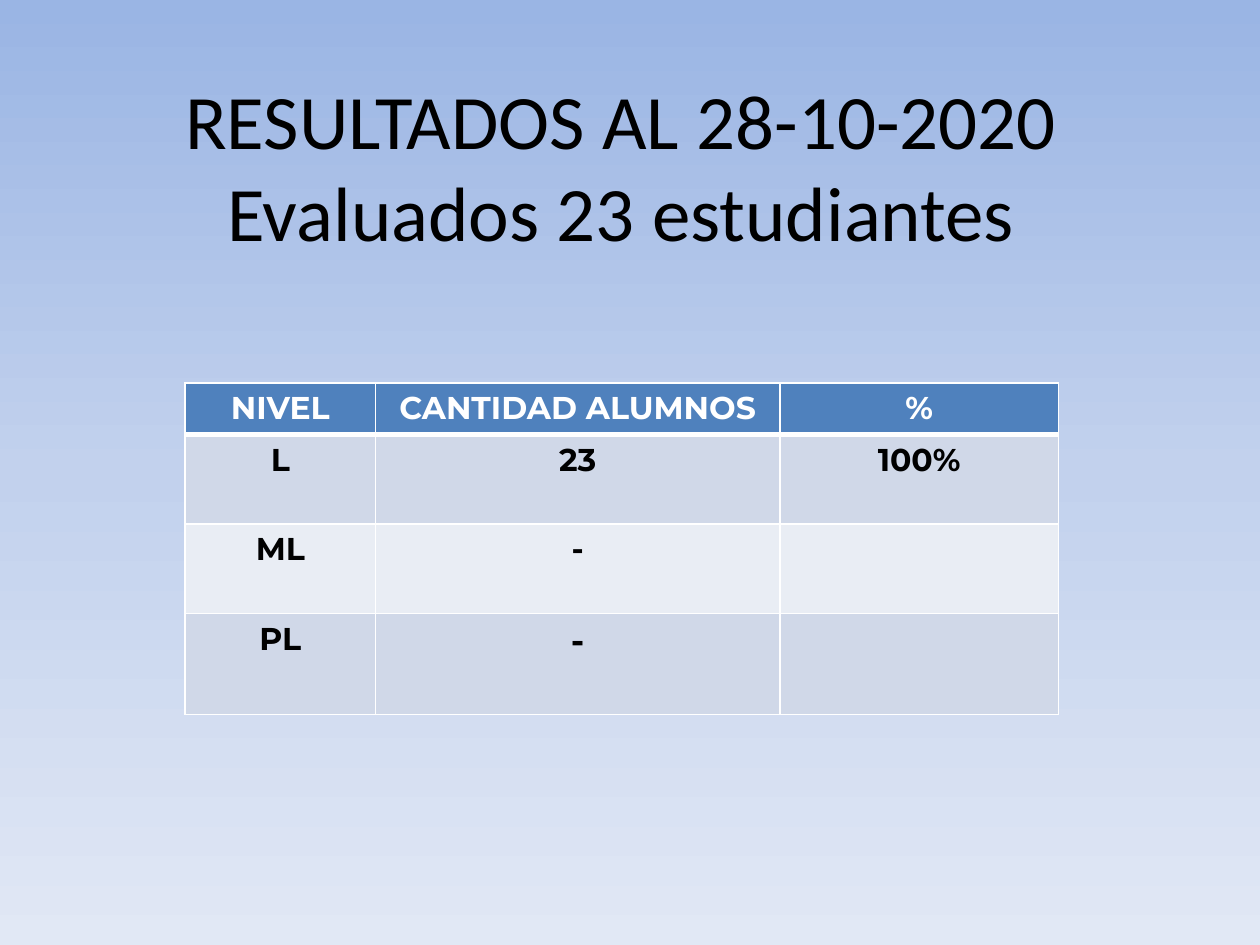
from copy import deepcopy
from pptx import Presentation
from pptx.dml.color import RGBColor
from pptx.enum.text import MSO_ANCHOR as Anchor, PP_ALIGN as Align
from pptx.oxml import parse_xml
from pptx.oxml.ns import nsdecls
from pptx.util import Inches, Pt

ROWS = [
    ("NIVEL", "CANTIDAD ALUMNOS", "%"),
    ("L", "23", "100%"),
    ("ML", "-", ""),
    ("PL", "-", ""),
]
WIDTHS = [1.51, 3.21, 2.21]
HEIGHTS = [0.41, 0.71, 0.71, 0.8]
FILLS = ["4F81BD", "D0D8E8", "E9EDF4", "D0D8E8"]
SKY = [(0, "9AB5E4"), (0.5, "C2D1ED"), (1, "E1E8F5")]


def color(code):
    return RGBColor.from_string(code)


def style(para, name, size, code, bold=False):
    para.alignment = Align.CENTER
    font = para.font
    font.name, font.size, font.bold = name, Pt(size), bold
    font.color.rgb = color(code)


def paint_sky(slide):
    fill = slide.background.fill
    fill.gradient()
    fill.gradient_angle = 270
    first = slide.element.xpath(".//p:bg//a:gs")[0]
    first.addnext(deepcopy(first))
    for stop, (pos, code) in zip(fill.gradient_stops, SKY):
        stop.position = pos
        stop.color.rgb = color(code)


def add_title(slide, left, top, width, height):
    box = slide.shapes.add_textbox(left, top, width, height)
    frame = box.text_frame
    frame.word_wrap = True
    frame.vertical_anchor = Anchor.MIDDLE
    para = frame.paragraphs[0]
    para.text = "RESULTADOS AL 28-10-2020\vEvaluados 23 estudiantes"
    style(para, "Calibri", 44, "000000")


def add_edges(cell, top, bottom):
    """Draw white cell borders; call before the cell is filled."""
    props = cell._tc.get_or_add_tcPr()
    for side, width in (("L", 1), ("R", 1), ("T", top), ("B", bottom)):
        props.append(parse_xml(
            f'<a:ln{side} {nsdecls("a")} w="{Pt(width)}"><a:solidFill>'
            f'<a:srgbClr val="FFFFFF"/></a:solidFill></a:ln{side}>'))


def add_results(slide, left, top):
    shape = slide.shapes.add_table(
        len(ROWS), len(WIDTHS), left, top,
        Inches(sum(WIDTHS)), Inches(sum(HEIGHTS)))
    table = shape.table
    for col, width in zip(table.columns, WIDTHS):
        col.width = Inches(width)
    for r, texts in enumerate(ROWS):
        table.rows[r].height = Inches(HEIGHTS[r])
        for c, text in enumerate(texts):
            cell = table.cell(r, c)
            add_edges(cell, 3 if r == 1 else 1, 3 if r == 0 else 1)
            cell.fill.solid()
            cell.fill.fore_color.rgb = color(FILLS[r])
            cell.text = text
            size = 20 if (r, c) == (3, 1) else 18
            ink = "FFFFFF" if r == 0 else "000000"
            style(cell.text_frame.paragraphs[0], "Montserrat", size, ink, True)


def main():
    deck = Presentation()
    deck.slide_width, deck.slide_height = Inches(10), Inches(7.5)
    slide = deck.slides.add_slide(deck.slide_layouts[6])
    paint_sky(slide)
    add_title(slide, Inches(0.43), Inches(0.44), Inches(9), Inches(1.73))
    add_results(slide, Inches(1.47), Inches(3.04))
    deck.save("out.pptx")


if __name__ == "__main__":
    main()
